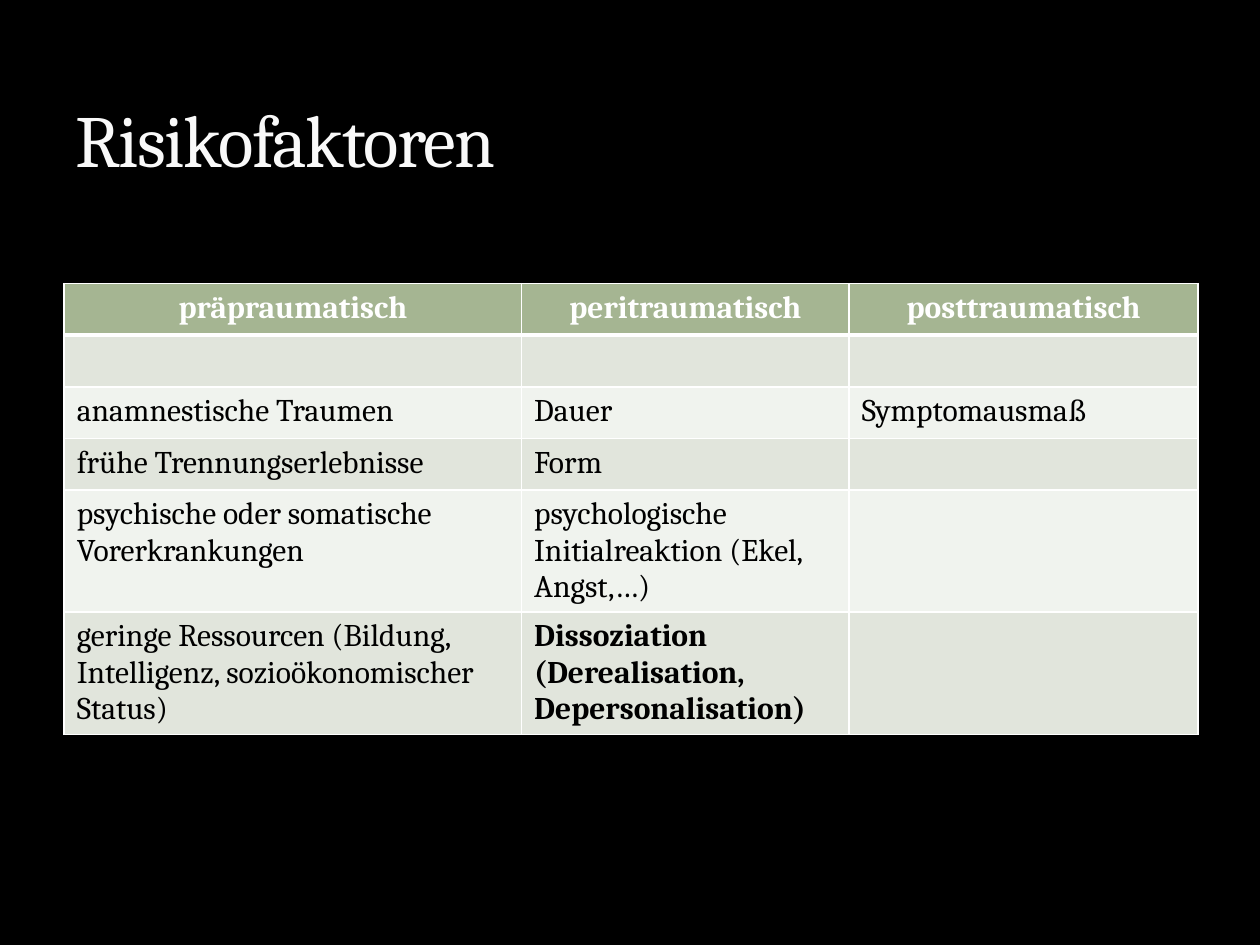
from lxml.etree import SubElement
from pptx import Presentation
from pptx.dml.color import RGBColor
from pptx.enum.text import MSO_ANCHOR as Anchor, MSO_AUTO_SIZE as AutoSize, PP_ALIGN as Align
from pptx.oxml import parse_xml
from pptx.oxml.ns import nsdecls, qn
from pptx.util import Inches, Pt


def rgb(value):
    return RGBColor.from_string(value)


def write(frame, text, size=18, color="000000", bold=False, align=Align.LEFT):
    para = frame.paragraphs[0]
    para.alignment = align
    span = para.add_run()
    span.text = text
    span.font.name = "Cambria"
    span.font.size = Pt(size)
    span.font.bold = bold
    span.font.color.rgb = rgb(color)
    return span


deck = Presentation()
deck.slide_width, deck.slide_height = Inches(10), Inches(7.5)
page = deck.slides.add_slide(deck.slide_layouts[5])
page.background.fill.solid()
page.background.fill.fore_color.rgb = rgb("000000")

# Title with tight letter spacing and a faint outline
title = page.shapes.title
title.left, title.top = Inches(0.5), Inches(0.17)
title.width, title.height = Inches(9), Inches(1.33)
title.text_frame.auto_size = AutoSize.NONE
title.text_frame.vertical_anchor = Anchor.BOTTOM
heading = write(title.text_frame, "Risikofaktoren", size=42, color="F9F9F9")
heading_format = heading.font._element
heading_format.set("spc", "-100")
heading_format.insert(0, parse_xml(
    f'<a:ln {nsdecls("a")} w="3175"><a:solidFill><a:srgbClr val="3C4422">'
    '<a:alpha val="25000"/></a:srgbClr></a:solidFill></a:ln>'))

# Risk factor table
rows = [
    ("präpraumatisch", "peritraumatisch", "posttraumatisch"),
    ("", "", ""),
    ("anamnestische Traumen", "Dauer", "Symptomausmaß"),
    ("frühe Trennungserlebnisse", "Form", ""),
    ("psychische oder somatische Vorerkrankungen",
     "psychologische Initialreaktion (Ekel, Angst,…)", ""),
    ("geringe Ressourcen (Bildung, Intelligenz, sozioökonomischer Status)",
     "Dissoziation (Derealisation, Depersonalisation)", ""),
]
column_widths = [3.63, 2.6, 2.77]
row_heights = [0.41] * 4 + [0.97] * 2
table = page.shapes.add_table(
    len(rows), len(column_widths), Inches(0.51), Inches(2.25),
    Inches(sum(column_widths)), Inches(sum(row_heights))).table
for column, width in zip(table.columns, column_widths):
    column.width = Inches(width)
for row, height in zip(table.rows, row_heights):
    row.height = Inches(height)

for r, texts in enumerate(rows):
    header = r == 0
    for c, text in enumerate(texts):
        cell = table.cell(r, c)

        # White borders, thicker below the header
        for side in "LRTB":
            thick = (r, side) in ((0, "B"), (1, "T"))
            line = SubElement(cell._tc.get_or_add_tcPr(), qn(f"a:ln{side}"),
                              w=str(Pt(3 if thick else 1)))
            SubElement(SubElement(line, qn("a:solidFill")), qn("a:srgbClr"), val="FFFFFF")

        # Header colour, then alternating bands
        cell.fill.solid()
        cell.fill.fore_color.rgb = rgb("A5B592" if header else "E1E5DC" if r % 2 else "F0F3EE")
        if text:
            write(cell.text_frame, text,
                  color="FFFFFF" if header else "000000",
                  bold=header or text.startswith("Dissoziation"),
                  align=Align.CENTER if header else Align.LEFT)

deck.save("out.pptx")
